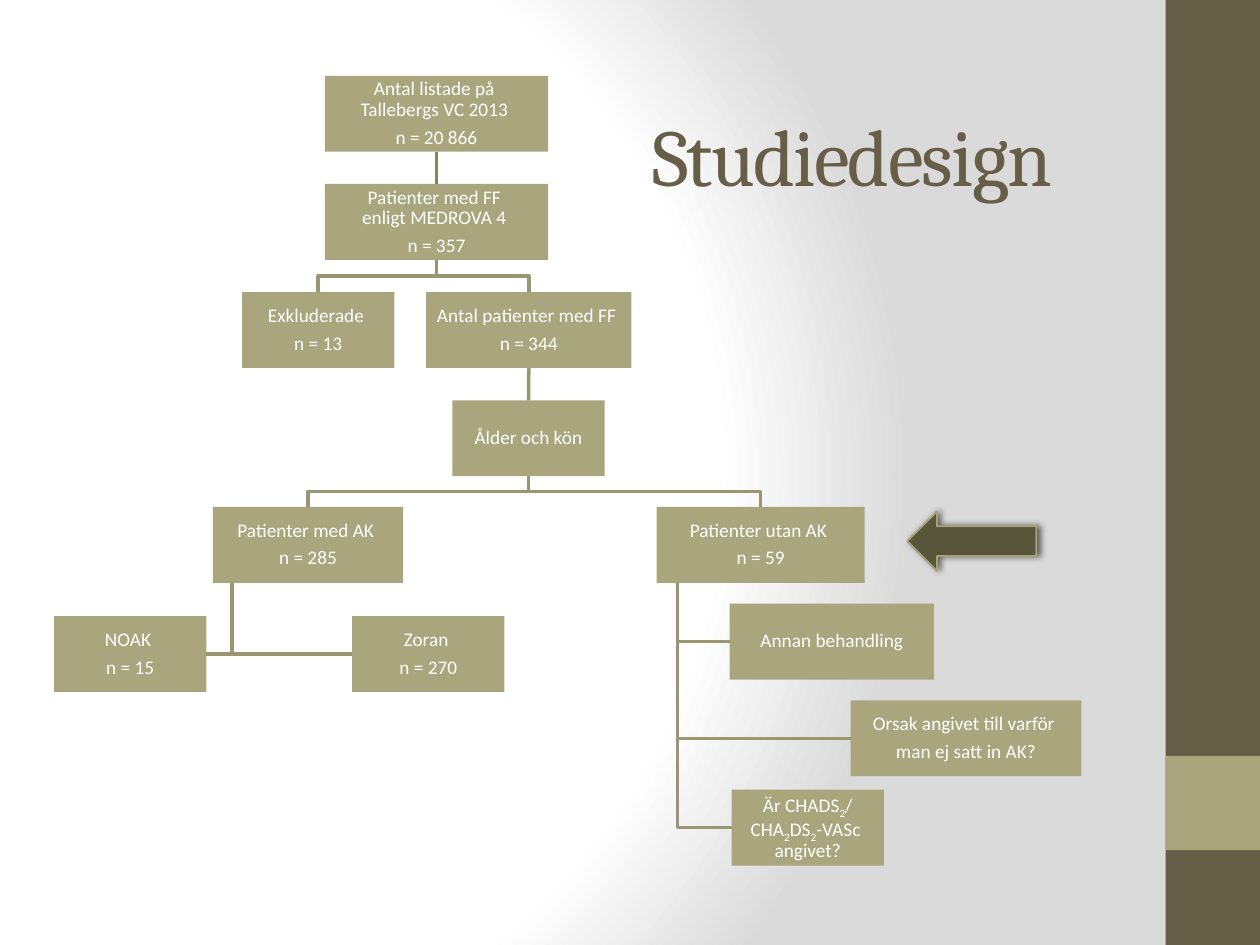
from lxml.etree import SubElement
from pptx import Presentation
from pptx.dml.color import RGBColor as RGB
from pptx.enum.shapes import MSO_CONNECTOR as LINK, MSO_SHAPE as SHAPE
from pptx.enum.text import MSO_ANCHOR as ANCHOR, PP_ALIGN as ALIGN
from pptx.oxml import parse_xml
from pptx.oxml.ns import nsdecls, qn
from pptx.util import Cm, Pt

HUES = {"dark": "675E47", "sand": "A9A57C", "line": "999671", "stem": "878463",
        "arrow": "58563A", "edge": "A6A278", "white": "FFFFFF", "grey": "DADADA"}
HIGH = 1.53
NARROW = 3.07
BOXES = {
    "listed": (6.55, 1.53, 4.5, ["Antal listade på \nTallebergs VC 2013 ", "n = 20 866"]),
    "found": (6.55, 3.71, 4.5, ["Patienter med FF \nenligt MEDROVA 4 ", "n = 357"]),
    "out": (4.88, 5.89, NARROW, ["Exkluderade ", "n = 13"]),
    "kept": (8.59, 5.89, 4.14, ["Antal patienter med FF ", "n = 344"]),
    "age": (9.12, 8.07, NARROW, ["Ålder och kön"]),
    "with": (4.29, 10.22, 3.84, ["Patienter med AK ", "n = 285"]),
    "noak": (1.09, 12.42, NARROW, ["NOAK ", "n = 15"]),
    "drug": (7.1, 12.42, NARROW, ["Zoran ", "n = 270"]),
    "without": (13.24, 10.22, 4.19, ["Patienter utan AK ", "n = 59"]),
    "other": (14.71, 12.17, 4.12, ["Annan behandling"]),
    "cause": (17.15, 14.12, 4.65, ["Orsak angivet till varför ", "man ej satt in AK?"]),
    "score": (14.75, 15.92, NARROW, ["Är CHADS_2_/\nCHA_2_DS_2_-VASc \nangivet?"]),
}
STEMS = [("listed", "found", "stem"), ("kept", "age", "line")]
FORKS = [("found", "out"), ("found", "kept"), ("age", "with"), ("age", "without")]
HANGS = [("with", "noak"), ("with", "drug"), ("without", "other"),
         ("without", "cause"), ("without", "score")]


def hue(name):
    """Return the named colour."""
    return RGB.from_string(HUES[name])


def paint_back(slide):
    """Give the slide its round white to grey gradient."""
    stops = "".join(f'<a:gs pos="{pos}"><a:srgbClr val="{HUES[name]}"/></a:gs>'
                    for pos, name in [(0, "white"), (75000, "white"), (100000, "grey")])
    slide.background.fill.solid()
    back = slide.background._cSld.find(qn("p:bg")).find(qn("p:bgPr"))
    back.replace(back[0], parse_xml(
        f'<a:gradFill {nsdecls("a")} rotWithShape="1"><a:gsLst>{stops}</a:gsLst>'
        '<a:path path="circle"><a:fillToRect l="20000" t="50000" r="100000" b="50000"/>'
        '</a:path></a:gradFill>'))


def add_block(slide, kind, area, fill):
    """Add a filled shape without line or shadow."""
    block = slide.shapes.add_shape(kind, *map(Cm, area))
    block.shadow.inherit = False
    block.fill.solid()
    block.fill.fore_color.rgb = hue(fill)
    block.line.fill.background()
    return block


def style(font, face, size, name):
    """Set face, size and colour of a font."""
    font.name, font.size = face, Pt(size)
    font.color.rgb = hue(name)


def write_para(para, text):
    """Write centred lines, with subscripts between underscores."""
    para.alignment = ALIGN.CENTER
    para.line_spacing, para.space_after = 0.9, Pt(3.85)
    for part, piece in enumerate(text.split("_")):
        for row, words in enumerate(piece.split("\n")):
            if row:
                para.add_line_break()
                SubElement(para._p.findall(qn("a:br"))[-1], qn("a:rPr"), sz="1100")
            run = para.add_run()
            run.text = words
            style(run.font, "Calibri", 11, "white")
            if part % 2:
                run.font._element.set("baseline", "-25000")


def add_box(slide, left, top, width, texts):
    """Add a box of the flow chart with its paragraphs."""
    box = add_block(slide, SHAPE.RECTANGLE, (left, top, width, HIGH), "sand")
    frame = box.text_frame
    frame.word_wrap = True
    frame.vertical_anchor = ANCHOR.MIDDLE
    frame.margin_left = frame.margin_right = Cm(0.02)
    frame.margin_top = frame.margin_bottom = Cm(0.02)
    for row, text in enumerate(texts):
        write_para(frame.add_paragraph() if row else frame.paragraphs[0], text)
    return box


def add_stem(slide, upper, lower, name):
    """Join two boxes with a straight connector."""
    stem = slide.shapes.add_connector(LINK.STRAIGHT, 0, 0, 0, 0)
    stem.begin_connect(upper, 2)
    stem.end_connect(lower, 0)
    stem.line.color.rgb = hue(name)
    stem.line.width = Pt(2)
    SubElement(stem._element.spPr, qn("a:effectLst"))


def add_bend(slide, points):
    """Draw an open bent line through the points."""
    pen = slide.shapes.build_freeform(*points[0])
    pen.add_line_segments(points[1:], close=False)
    bend = pen.convert_to_shape()
    bend.shadow.inherit = False
    bend.fill.background()
    bend.line.color.rgb = hue("line")
    bend.line.width = Pt(2)


def add_fork(slide, upper, lower):
    """Lead from the bottom of one box to the top of another."""
    start, foot = upper.left + upper.width // 2, upper.top + upper.height
    end, half = lower.left + lower.width // 2, (foot + lower.top) // 2
    add_bend(slide, [(start, foot), (start, half), (end, half), (end, lower.top)])


def add_hang(slide, upper, lower):
    """Lead from near a box's left corner to the side of a lower box."""
    start, foot = upper.left + upper.width // 10, upper.top + upper.height
    mid = lower.top + lower.height // 2
    side = lower.left if lower.left > start else lower.left + lower.width
    add_bend(slide, [(start, foot), (start, mid), (side, mid)])


def add_title(slide, text):
    """Add the slide's heading."""
    frame = slide.shapes.add_textbox(Cm(12.9), Cm(1.53), Cm(9.8), Cm(3.18)).text_frame
    frame.word_wrap = True
    frame.vertical_anchor = ANCHOR.MIDDLE
    frame.text = text
    font = frame.paragraphs[0].runs[0].font
    style(font, "Cambria", 46, "dark")
    font._element.set("spc", "-100")


def add_arrow(slide):
    """Add the shaded arrow that points at the group without treatment."""
    arrow = add_block(slide, SHAPE.LEFT_ARROW, (18.29, 10.31, 2.6, 1.2), "arrow")
    arrow.line.color.rgb = hue("edge")
    arrow.line.width = Pt(1)
    glow = arrow._element.spPr.find(qn("a:effectLst"))
    glow.append(parse_xml(
        f'<a:outerShdw {nsdecls("a")} blurRad="50800" dist="25400" dir="0">'
        '<a:srgbClr val="000000"><a:alpha val="60000"/></a:srgbClr></a:outerShdw>'))


def main():
    """Build the slide and save it."""
    deck = Presentation()
    deck.slide_width, deck.slide_height = Cm(25.4), Cm(19.05)
    slide = deck.slides.add_slide(deck.slide_layouts[6])
    paint_back(slide)
    add_block(slide, SHAPE.RECTANGLE, (23.5, 0, 1.9, 19.05), "dark")
    add_block(slide, SHAPE.RECTANGLE, (23.5, 15.24, 1.9, 1.9), "sand")
    boxes = {key: add_box(slide, *box) for key, box in BOXES.items()}
    for upper, lower, name in STEMS:
        add_stem(slide, boxes[upper], boxes[lower], name)
    for upper, lower in FORKS:
        add_fork(slide, boxes[upper], boxes[lower])
    for upper, lower in HANGS:
        add_hang(slide, boxes[upper], boxes[lower])
    add_title(slide, "Studiedesign")
    add_arrow(slide)
    deck.save("out.pptx")


if __name__ == "__main__":
    main()
